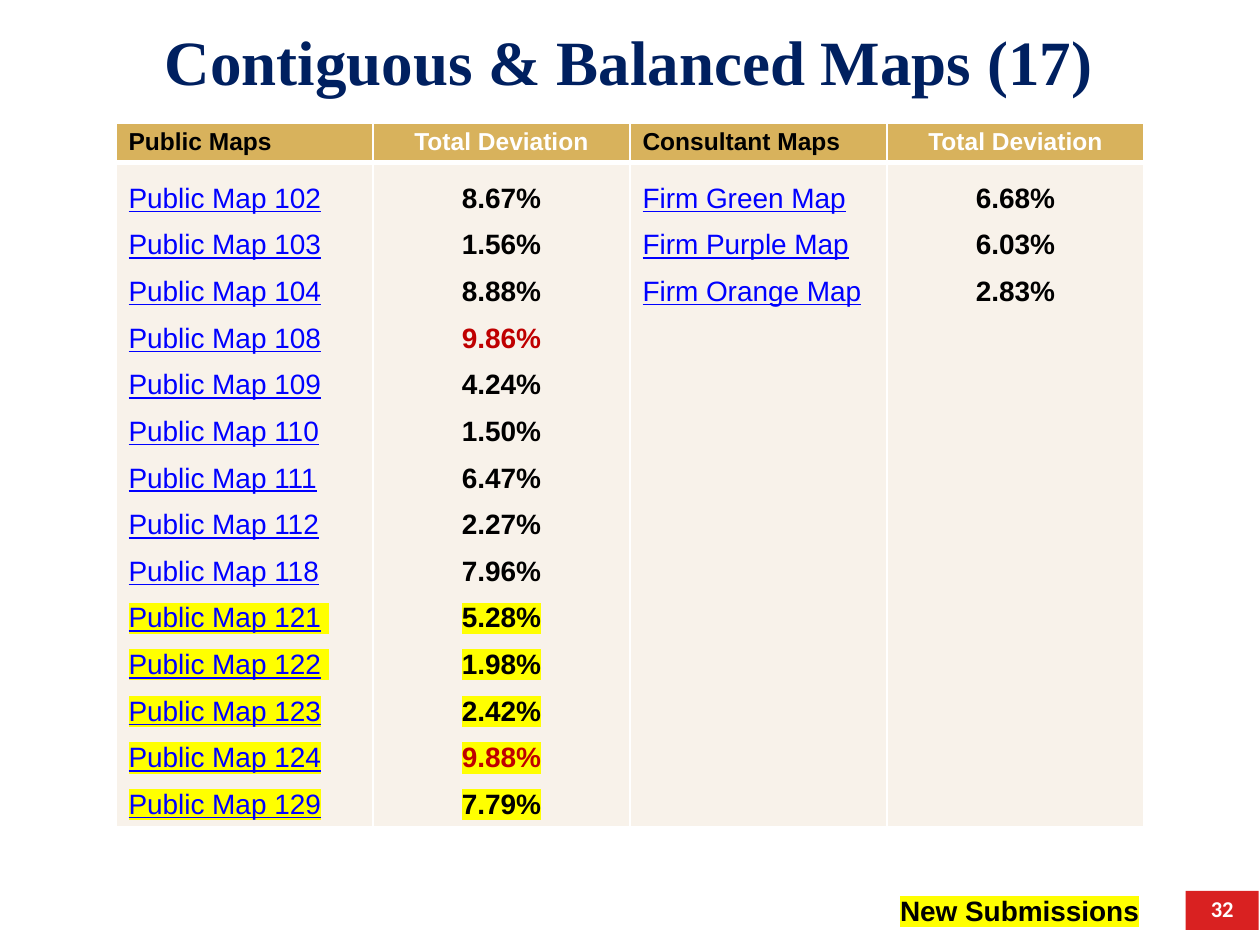
"""Build the slide that lists contiguous and balanced maps with their deviations."""
from lxml import etree
from pptx import Presentation
from pptx.dml.color import RGBColor
from pptx.enum import shapes, text
from pptx.oxml import ns
from pptx.util import Inches, Pt

NAVY = RGBColor(0x00, 0x20, 0x60)
GOLD = RGBColor(0xD8, 0xB2, 0x5C)
CREAM = RGBColor(0xF8, 0xF2, 0xEA)
BLUE = RGBColor(0x00, 0x00, 0xFF)
RED = RGBColor(0xBF, 0x00, 0x00)
BADGE_RED = RGBColor(0xD9, 0x21, 0x21)
BLACK = RGBColor(0x00, 0x00, 0x00)
WHITE = RGBColor(0xFF, 0xFF, 0xFF)
YELLOW = RGBColor(0xFF, 0xFF, 0x00)

TITLE = "Contiguous & Balanced Maps (17)"
LEGEND = "New Submissions"
PAGE_NUMBER = "32"
HEADERS = [
    ("Public Maps", BLACK),
    ("Total Deviation", WHITE),
    ("Consultant Maps", BLACK),
    ("Total Deviation", WHITE),
]
PUBLIC_MAPS = [
    ("Public Map 102", "8.67%"),
    ("Public Map 103", "1.56%"),
    ("Public Map 104", "8.88%"),
    ("Public Map 108", "9.86%"),
    ("Public Map 109", "4.24%"),
    ("Public Map 110", "1.50%"),
    ("Public Map 111", "6.47%"),
    ("Public Map 112", "2.27%"),
    ("Public Map 118", "7.96%"),
    ("Public Map 121 ", "5.28%"),
    ("Public Map 122 ", "1.98%"),
    ("Public Map 123", "2.42%"),
    ("Public Map 124", "9.88%"),
    ("Public Map 129", "7.79%"),
]
CONSULTANT_MAPS = [
    ("Firm Green Map", "6.68%"),
    ("Firm Purple Map", "6.03%"),
    ("Firm Orange Map", "2.83%"),
]
FIRST_NEW = 9
HIGH_DEVIATION = 9
COLUMN_WIDTH = 2.04
ROW_HEIGHTS = [0.31, 5.27]


def add_span(para, words, size, color, bold=True, underline=None, new=False, font="Arial"):
    span = para.add_run()
    span.text = words
    span.font.size = Pt(size)
    span.font.name = font
    span.font.bold = bold
    span.font.underline = underline
    span.font.color.rgb = color
    if new:
        fill = span.font._element.find(ns.qn("a:solidFill"))
        highlight = etree.Element(ns.qn("a:highlight"))
        etree.SubElement(highlight, ns.qn("a:srgbClr"), val=str(YELLOW))
        fill.addnext(highlight)


def set_borders(cell, widths):
    properties = cell._tc.get_or_add_tcPr()
    for index, (side, width) in enumerate(zip("LRTB", widths)):
        line = etree.Element(ns.qn(f"a:ln{side}"), w=str(Pt(width)))
        fill = etree.SubElement(line, ns.qn("a:solidFill"))
        etree.SubElement(fill, ns.qn("a:srgbClr"), val=str(WHITE))
        properties.insert(index, line)


def fill_cell(cell, color, widths):
    cell.fill.solid()
    cell.fill.fore_color.rgb = color
    cell.margin_left = cell.margin_right = Inches(0.1)
    cell.margin_top = cell.margin_bottom = Inches(0.04)
    set_borders(cell, widths)


def fill_lines(cell, lines, is_deviation):
    frame = cell.text_frame
    for index, words in enumerate(lines):
        para = frame.add_paragraph() if index else frame.paragraphs[0]
        para.line_spacing = 1.5
        new = index >= FIRST_NEW
        if is_deviation:
            para.alignment = text.PP_ALIGN.CENTER
            high = float(words.rstrip("%")) > HIGH_DEVIATION
            add_span(para, words, 16, RED if high else BLACK, new=new)
        else:
            name = words.rstrip()
            add_span(para, name, 16, BLUE, bold=False, underline=True, new=new)
            if name != words:
                add_span(para, words[len(name):], 16, BLACK, bold=False, new=new)


def add_map_table(page):
    frame = page.shapes.add_table(
        2, len(HEADERS), Inches(0.92), Inches(0.98),
        Inches(COLUMN_WIDTH * len(HEADERS)), Inches(sum(ROW_HEIGHTS)))
    table = frame.table
    for row, height in zip(table.rows, ROW_HEIGHTS):
        row.height = Inches(height)
    columns = [*zip(*PUBLIC_MAPS), *zip(*CONSULTANT_MAPS)]
    for index, ((words, color), lines) in enumerate(zip(HEADERS, columns)):
        table.columns[index].width = Inches(COLUMN_WIDTH)
        is_deviation = index % 2 == 1
        header, body = table.cell(0, index), table.cell(1, index)
        fill_cell(header, GOLD, (1, 1, 1, 3))
        fill_cell(body, CREAM, (1, 1, 3, 1))
        para = header.text_frame.paragraphs[0]
        para.space_after = Pt(6)
        if is_deviation:
            para.alignment = text.PP_ALIGN.CENTER
        add_span(para, words, 14, color)
        fill_lines(body, lines, is_deviation)


def set_frame(box, anchor, alignment):
    frame = box.text_frame
    frame.word_wrap = True
    frame.vertical_anchor = anchor
    frame.margin_left = frame.margin_right = Inches(0.05)
    frame.margin_top = frame.margin_bottom = Inches(0.05)
    para = frame.paragraphs[0]
    para.alignment = alignment
    return para


def main():
    deck = Presentation()
    deck.slide_width, deck.slide_height = Inches(10), Inches(7.5)
    page = deck.slides.add_slide(deck.slide_layouts[6])
    add_map_table(page)

    badge = page.shapes.add_shape(
        shapes.MSO_SHAPE.RECTANGLE, Inches(9.41), Inches(7.07), Inches(0.58), Inches(0.31))
    badge.shadow.inherit = False
    badge.fill.solid()
    badge.fill.fore_color.rgb = BADGE_RED
    badge.line.fill.background()
    para = set_frame(badge, text.MSO_ANCHOR.MIDDLE, text.PP_ALIGN.CENTER)
    para.line_spacing = 0.9
    add_span(para, PAGE_NUMBER, 12.9, WHITE, font="Calibri")

    title = page.shapes.add_textbox(Inches(-0.01), 0, Inches(10), Inches(0.96))
    para = set_frame(title, text.MSO_ANCHOR.MIDDLE, text.PP_ALIGN.CENTER)
    add_span(para, TITLE, 36, NAVY, font="Times New Roman")

    legend = page.shapes.add_textbox(Inches(5.52), Inches(7.04), Inches(3.57), Inches(0.37))
    para = set_frame(legend, text.MSO_ANCHOR.TOP, text.PP_ALIGN.RIGHT)
    legend.text_frame.auto_size = text.MSO_AUTO_SIZE.SHAPE_TO_FIT_TEXT
    add_span(para, LEGEND, 16, BLACK, new=True)

    deck.save("out.pptx")


if __name__ == "__main__":
    main()
